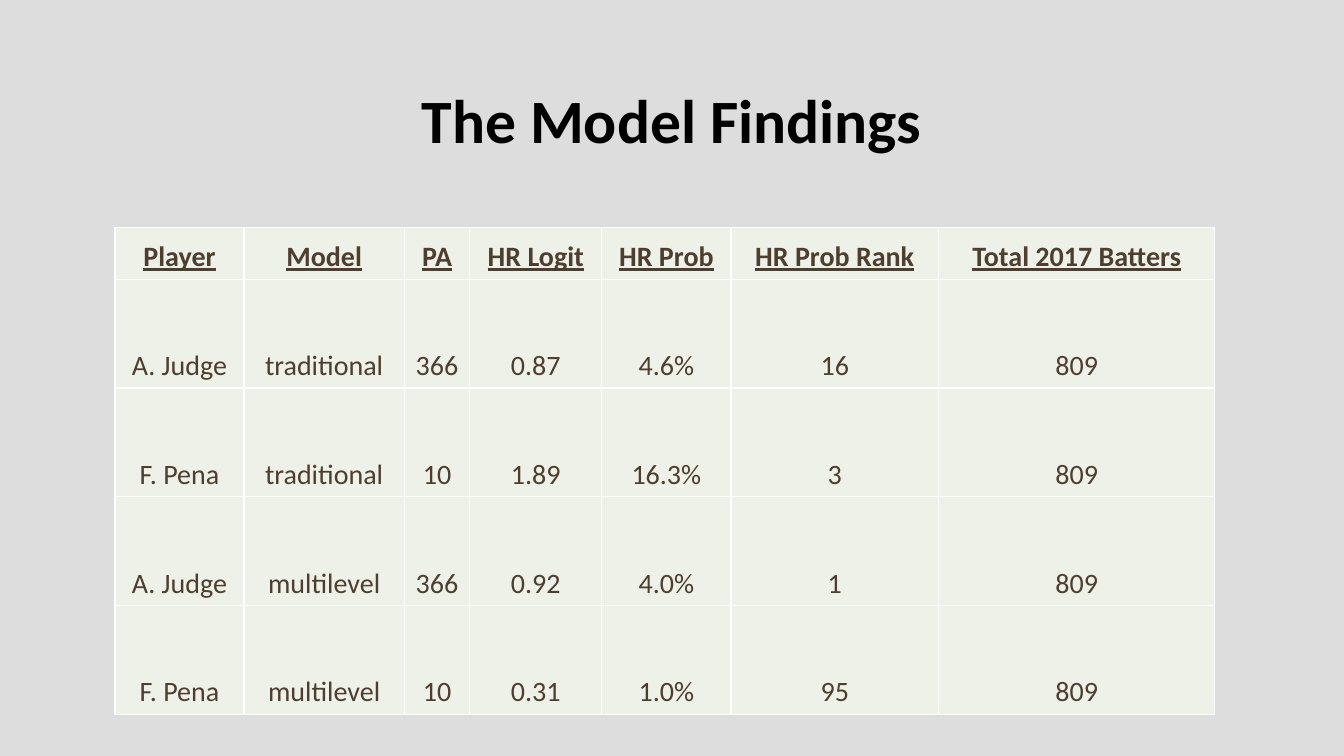
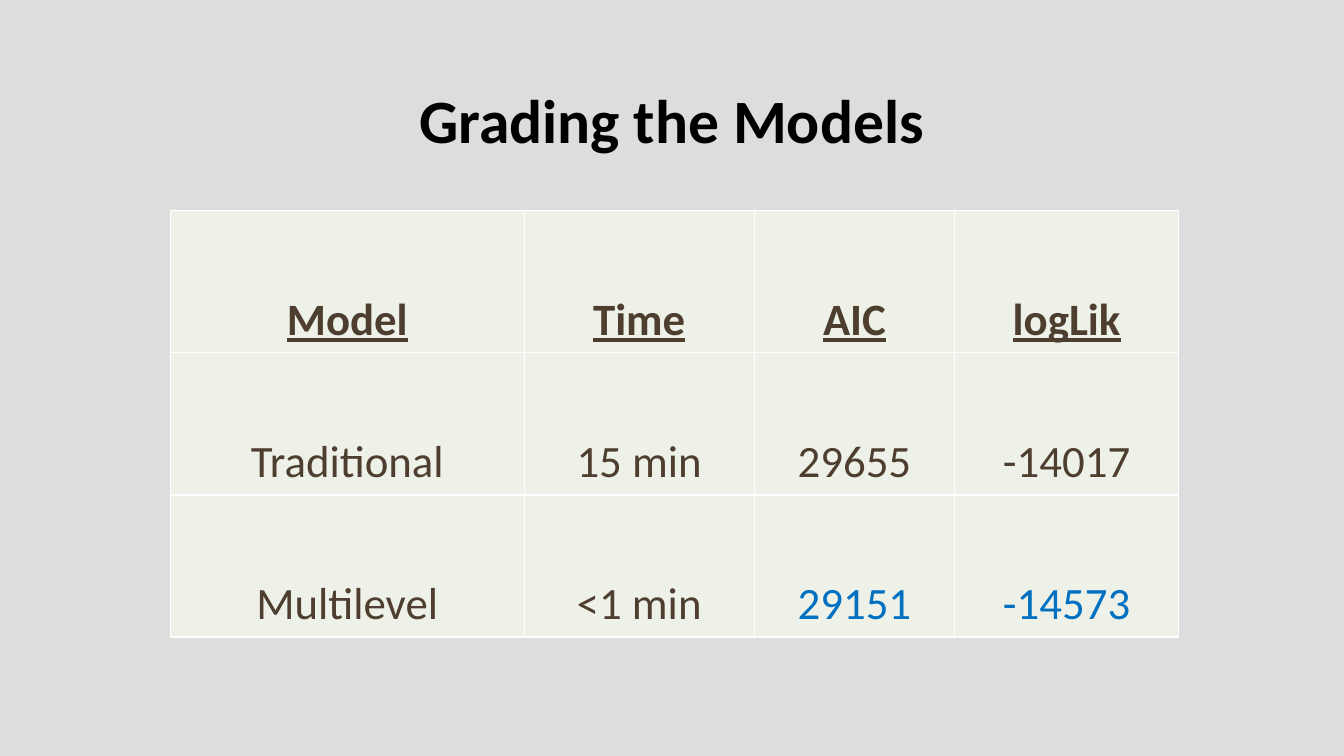
from dataclasses import dataclass, field

import pptx
import pptx.dml.color
import pptx.enum.text
import pptx.oxml.ns
import pptx.util
from lxml import etree
from pptx.util import Inches

COLORS = {
    "background": "DDDDDD",
    "title": "000000",
    "cell": "EEF1E7",
    "text": "4D3E2F",
    "best": "0070C0",
    "border": "FFFFFF",
}
FONT = "Calibri"
BORDER_POINTS = 1
BLANK_LAYOUT = 6


@dataclass(frozen=True)
class TableSlide:
    title: str
    left: float
    top: float
    columns: list[float]
    row_heights: list[float]
    text_size: int
    rows: list[list[str]]
    best_values: set[str] = field(default_factory=set)


TABLE_SLIDES = [
    TableSlide(
        title="The Model Findings",
        left=1.14,
        top=2.26,
        columns=[1.28, 1.59, 0.65, 1.31, 1.28, 2.06, 2.74],
        row_heights=[0.51] + [1.08] * 4,
        text_size=20,
        rows=[
            ["Player", "Model", "PA", "HR Logit", "HR Prob", "HR Prob Rank", "Total 2017 Batters"],
            ["A. Judge", "traditional", "366", "0.87", "4.6%", "16", "809"],
            ["F. Pena", "traditional", "10", "1.89", "16.3%", "3", "809"],
            ["A. Judge", "multilevel", "366", "0.92", "4.0%", "1", "809"],
            ["F. Pena", "multilevel", "10", "0.31", "1.0%", "95", "809"],
        ],
    ),
    TableSlide(
        title="Grading the Models",
        left=1.69,
        top=2.09,
        columns=[3.51, 2.28, 1.99, 2.22],
        row_heights=[1.41] * 3,
        text_size=32,
        rows=[
            ["Model", "Time", "AIC", "logLik"],
            ["Traditional", "15 min", "29655", "-14017"],
            ["Multilevel", "<1 min", "29151", "-14573"],
        ],
        best_values={"29151", "-14573"},
    ),
]


def rgb(name: str) -> pptx.dml.color.RGBColor:
    return pptx.dml.color.RGBColor.from_string(COLORS[name])


def write_text(frame, text: str, *, size: int, color: str,
               bold: bool = False, underline: bool = False) -> None:
    """Write one centred line in a text frame."""
    para = frame.paragraphs[0]
    para.alignment = pptx.enum.text.PP_ALIGN.CENTER
    span = para.add_run()
    span.text = text
    span.font.name = FONT
    span.font.size = pptx.util.Pt(size)
    span.font.bold = bold
    span.font.underline = underline
    span.font.color.rgb = rgb(color)


def add_title(page, text: str) -> None:
    box = page.shapes.add_textbox(Inches(1.54), Inches(0.3), Inches(10.25), Inches(1.29))
    box.text_frame.word_wrap = True
    box.text_frame.vertical_anchor = pptx.enum.text.MSO_ANCHOR.BOTTOM
    write_text(box.text_frame, text, size=44, color="title", bold=True)


def style_cell(cell) -> None:
    cell.vertical_anchor = pptx.enum.text.MSO_ANCHOR.BOTTOM
    cell.margin_left = cell.margin_top = cell.margin_right = Inches(0.01)
    cell.margin_bottom = Inches(0.05)
    # Borders come before the fill in the cell properties
    qn = pptx.oxml.ns.qn
    properties = cell._tc.get_or_add_tcPr()
    for side in ("a:lnL", "a:lnR", "a:lnT", "a:lnB"):
        line = etree.SubElement(properties, qn(side), w=str(pptx.util.Pt(BORDER_POINTS)))
        fill = etree.SubElement(line, qn("a:solidFill"))
        etree.SubElement(fill, qn("a:srgbClr"), val=COLORS["border"])
    cell.fill.solid()
    cell.fill.fore_color.rgb = rgb("cell")


def add_table(page, content: TableSlide) -> None:
    table = page.shapes.add_table(
        len(content.rows), len(content.columns),
        Inches(content.left), Inches(content.top),
        Inches(sum(content.columns)), Inches(sum(content.row_heights)),
    ).table
    for column, width in zip(table.columns, content.columns):
        column.width = Inches(width)
    for row, height in zip(table.rows, content.row_heights):
        row.height = Inches(height)
    for row_index, values in enumerate(content.rows):
        header = row_index == 0
        for column_index, value in enumerate(values):
            cell = table.cell(row_index, column_index)
            style_cell(cell)
            write_text(cell.text_frame, value, size=content.text_size,
                       color="best" if value in content.best_values else "text",
                       bold=header, underline=header)


def main() -> None:
    deck = pptx.Presentation()
    deck.slide_width, deck.slide_height = Inches(13.33), Inches(7.5)

    # Shared background
    background = deck.slide_master.background.fill
    background.solid()
    background.fore_color.rgb = rgb("background")

    # One title and one table per slide
    for content in TABLE_SLIDES:
        page = deck.slides.add_slide(deck.slide_layouts[BLANK_LAYOUT])
        add_title(page, content.title)
        add_table(page, content)

    deck.save("out.pptx")


if __name__ == "__main__":
    main()
